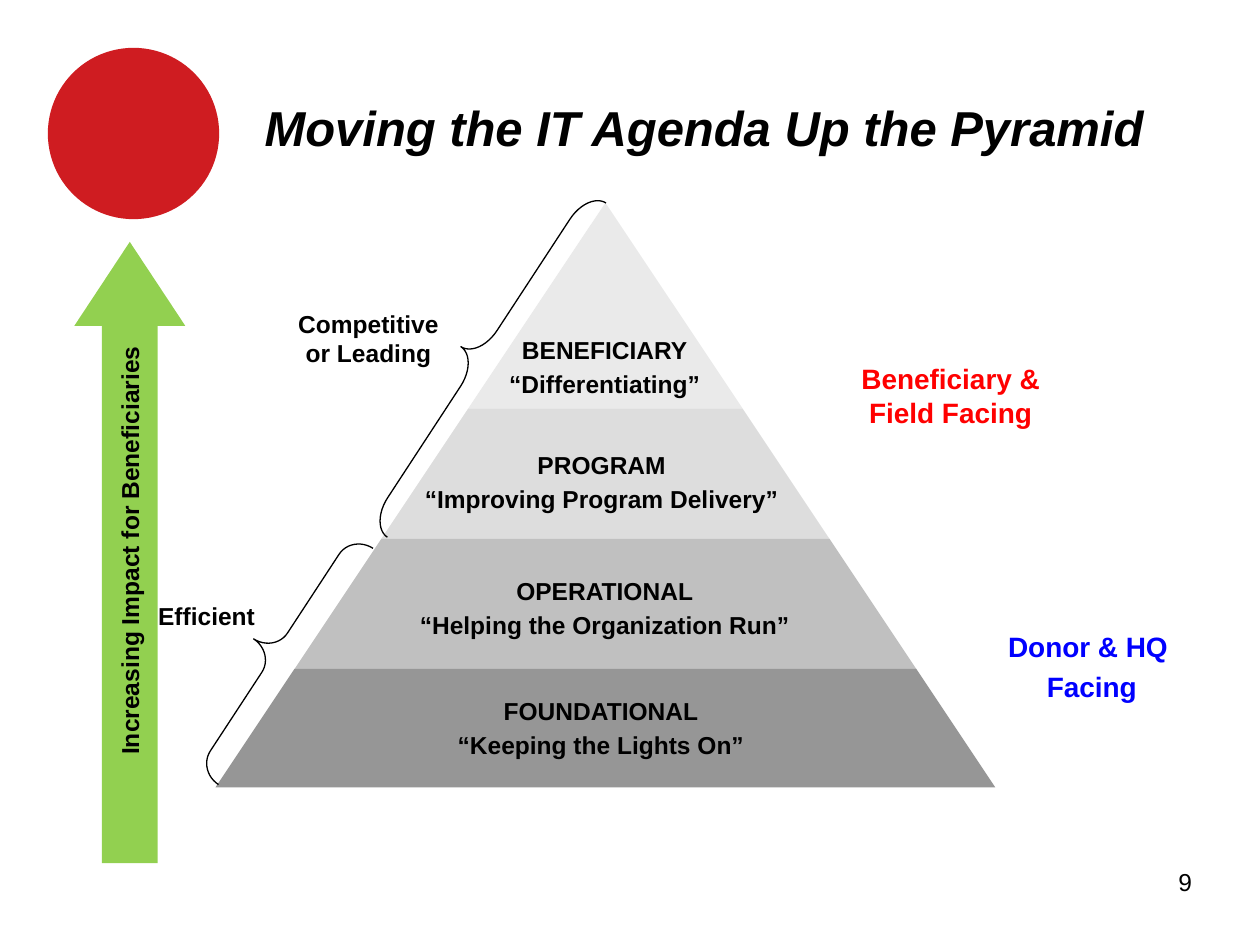
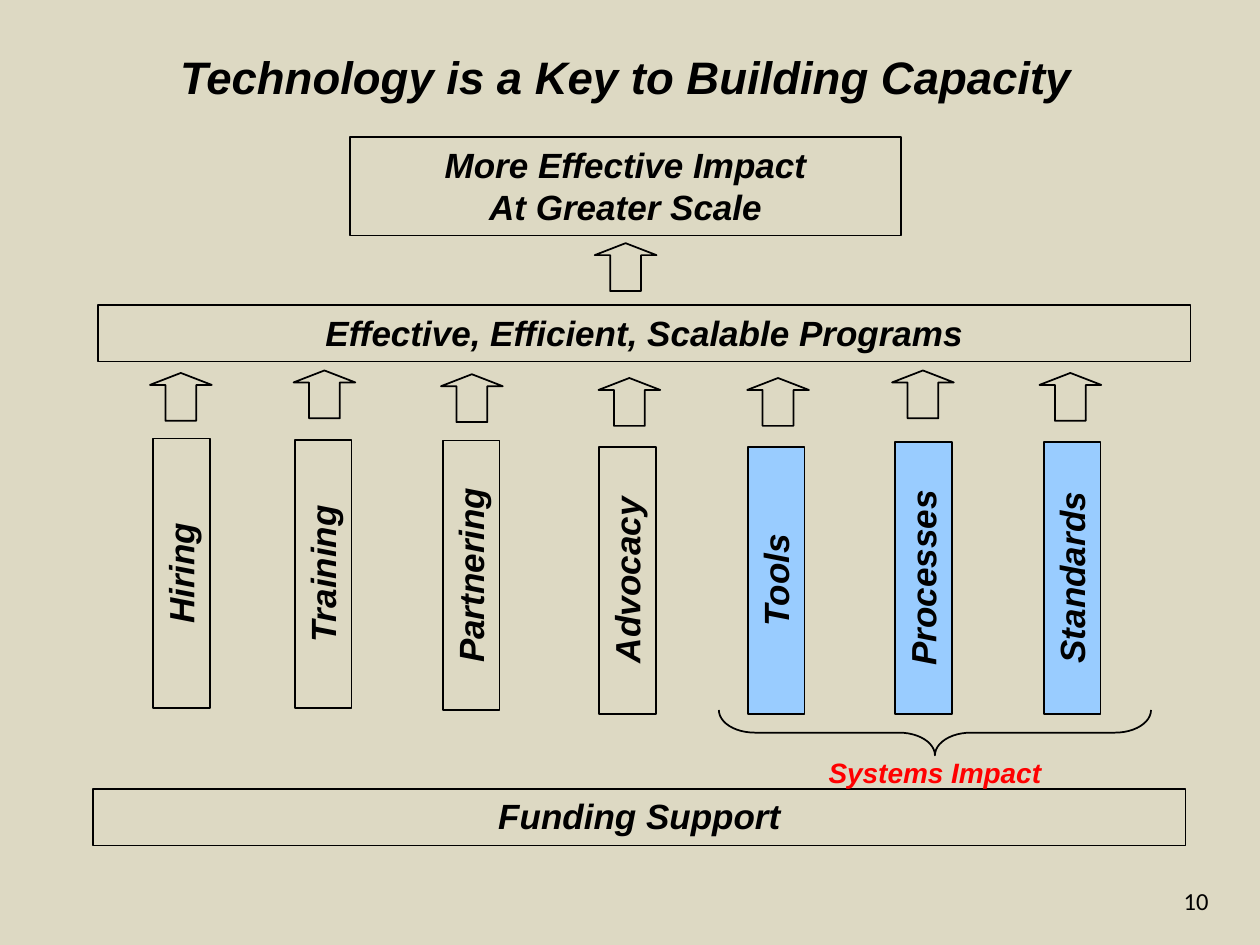
"""Build two slides on technology leadership: an IT pyramid and a capacity model."""
from dataclasses import dataclass

from pptx import Presentation
from pptx import util as u
from pptx.dml.color import RGBColor
from pptx.enum import shapes, text

COLUMNS, ROWS = 100, 75
CELL = u.Inches(0.1)
SHAPE = shapes.MSO_SHAPE
ALIGN = text.PP_ALIGN


@dataclass(frozen=True)
class Theme:
    """Colours, fonts and type sizes shared by both slides."""

    ink: str = "000000"
    paper: str = "FFFFFF"
    sand: str = "DDD9C3"
    red: str = "FF0000"
    blue: str = "0000FF"
    disc: str = "CF1C21"
    green: str = "92D050"
    sky: str = "99CCFF"
    font: str = "Arial"
    second_font: str = "Calibri"
    label_size: int = 14
    callout_size: int = 16
    box_size: int = 20
    capacity_title_size: int = 26
    pyramid_title_size: int = 28


THEME = Theme()


@dataclass(frozen=True)
class Box:
    """A rectangle in grid columns and rows."""

    left: float
    top: float
    width: float
    height: float

    def turned(self) -> "Box":
        """Swap width and height about the same centre."""
        shift = (self.width - self.height) / 2
        return Box(self.left + shift, self.top - shift, self.height, self.width)

    def lengths(self) -> list[int]:
        """Return left, top, width and height as slide lengths."""
        return [grid(value) for value in (self.left, self.top, self.width, self.height)]


@dataclass(frozen=True)
class Tier:
    """One level of the pyramid with its two-line label."""

    top: float
    bottom: float
    fill: str
    lines: tuple[str, str]
    label_centre: float
    label_top: float


@dataclass(frozen=True)
class Pillar:
    """An upright box with an arrow above it."""

    name: str
    centre: float
    top: float
    height: float
    arrow_left: float
    arrow_top: float
    fill: str | None = None


TIERS = (
    Tier(16.1, 32.4, "EAEAEA", ("BENEFICIARY", "“Differentiating”"), 48, 26.6),
    Tier(32.4, 42.75, "DDDDDD", ("PROGRAM", "“Improving Program Delivery”"), 47.75, 35.7),
    Tier(42.75, 53.1, "C0C0C0", ("OPERATIONAL", "“Helping the Organization Run”"), 48, 45.7),
    Tier(53.1, 62.5, "969696", ("FOUNDATIONAL", "“Keeping the Lights On”"), 47.7, 55.2),
)
APEX = 48.05
HALF_BASE = 30.95

PILLARS = (
    Pillar("Hiring", 14.4, 34.8, 21.4, 11.9, 29.6),
    Pillar("Training", 25.65, 34.9, 21.3, 23.3, 29.4),
    Pillar("Partnering", 37.4, 34.95, 21.4, 35, 29.7),
    Pillar("Advocacy", 49.8, 35.45, 21.2, 47.5, 30),
    Pillar("Tools", 61.6, 35.45, 21.2, 59.3, 30, THEME.sky),
    Pillar("Processes", 73.3, 35.05, 21.6, 70.8, 29.4, THEME.sky),
    Pillar("Standards", 85.1, 35.05, 21.6, 82.5, 29.6, THEME.sky),
)
PILLAR_WIDTH = 4.5


def grid(cells: float) -> int:
    """Convert grid cells to a slide length."""
    return round(cells * CELL)


def write_text(frame, *lines: str, size: float = THEME.label_size, color: str = THEME.ink,
               font: str = THEME.font, bold: bool = True, italic: bool = False,
               align=ALIGN.CENTER, spacing: float = 0) -> None:
    """Write one formatted paragraph for each line."""
    for index, line in enumerate(lines):
        paragraph = frame.add_paragraph() if index else frame.paragraphs[0]
        paragraph.alignment = align
        paragraph.space_before = u.Pt(spacing * size if index else 0)
        run = paragraph.add_run()
        run.text = line
        run.font.size, run.font.name = u.Pt(size), font
        run.font.bold, run.font.italic = bold, italic
        run.font.color.rgb = RGBColor.from_string(color)


def paint(shape, fill: str | None, line: str | None, weight: float = 1) -> None:
    """Set the fill and outline and remove the shadow."""
    shape.shadow.inherit = False
    if fill:
        shape.fill.solid()
        shape.fill.fore_color.rgb = RGBColor.from_string(fill)
    else:
        shape.fill.background()
    if line:
        shape.line.color.rgb = RGBColor.from_string(line)
        shape.line.width = u.Pt(weight)
    else:
        shape.line.fill.background()


def add_shape(slide, kind, box: Box, fill: str | None = None, line: str | None = THEME.ink,
              weight: float = 1, rotation: float = 0, adjust: tuple[float, ...] = ()):
    """Draw a preset shape."""
    shape = slide.shapes.add_shape(kind, *box.lengths())
    paint(shape, fill, line, weight)
    shape.rotation = rotation
    for index, value in enumerate(adjust):
        shape.adjustments[index] = value
    return shape


def add_label(slide, box: Box, *lines: str, rotation: float = 0, inset: bool = False,
              **style) -> None:
    """Draw a text box."""
    label = slide.shapes.add_textbox(*box.lengths())
    label.rotation = rotation
    frame = label.text_frame
    frame.word_wrap = True
    if not inset:
        frame.margin_left = frame.margin_right = frame.margin_top = frame.margin_bottom = 0
    write_text(frame, *lines, **style)


def add_text_block(slide, box: Box, *lines: str, fill: str | None = None,
                   rotation: float = 0) -> None:
    """Draw an outlined rectangle with bold italic text."""
    frame = add_shape(slide, SHAPE.RECTANGLE, box, fill, rotation=rotation).text_frame
    frame.word_wrap = True
    frame.vertical_anchor = text.MSO_ANCHOR.TOP
    write_text(frame, *lines, size=THEME.box_size, italic=True)


def add_small_arrow(slide, left: float, top: float) -> None:
    """Draw an outlined upward arrow."""
    add_shape(slide, SHAPE.UP_ARROW, Box(left, top, 4.9, 3.8), adjust=(0.5, 0.25))


def add_tier(slide, tier: Tier) -> None:
    """Draw a pyramid level whose sides follow the common slope."""
    slope = HALF_BASE / (TIERS[-1].bottom - TIERS[0].top)
    upper, lower = (slope * (y - TIERS[0].top) for y in (tier.top, tier.bottom))
    corners = [(grid(x), grid(y)) for x, y in (
        (APEX - lower, tier.bottom), (APEX + lower, tier.bottom),
        (APEX + upper, tier.top), (APEX - upper, tier.top))]
    builder = slide.shapes.build_freeform(*corners[0])
    builder.add_line_segments(corners[1:], close=True)
    paint(builder.convert_to_shape(), tier.fill, None)


def add_slide(presentation, background: str, title: str, title_box: Box, title_size: float,
              title_align, number: str, number_box: Box, number_font: str):
    """Add a title-only slide with its background, title and page number."""
    slide = presentation.slides.add_slide(presentation.slide_layouts[5])
    slide.background.fill.solid()
    slide.background.fill.fore_color.rgb = RGBColor.from_string(background)
    holder = slide.shapes.title
    holder.left, holder.top, holder.width, holder.height = title_box.lengths()
    holder.text_frame.vertical_anchor = text.MSO_ANCHOR.MIDDLE
    write_text(holder.text_frame, title, size=title_size, italic=True, align=title_align)
    add_label(slide, number_box, number, inset=True, font=number_font, bold=False,
              align=ALIGN.RIGHT)
    return slide


def build_pyramid_slide(presentation) -> None:
    """Draw the four-level IT pyramid."""
    slide = add_slide(presentation, THEME.paper, "Moving the IT Agenda Up the Pyramid",
                      Box(20, 3.8, 75, 12.5), THEME.pyramid_title_size, ALIGN.LEFT,
                      "9", Box(82.3, 68.3, 13.3, 5.2), THEME.font)
    for tier in TIERS:
        add_tier(slide, tier)
    for tier in TIERS:
        add_label(slide, Box(tier.label_centre - 15, tier.label_top, 30, 5.2), *tier.lines,
                  spacing=0.2)
    for box, curve in ((Box(36.3, 12.6, 3.4, 31.7), 0.778), (Box(19.8, 40.6, 4, 22.4), 0.466)):
        add_shape(slide, SHAPE.LEFT_BRACE, box, weight=0.75, rotation=33.2, adjust=(curve, 0.5))
    add_shape(slide, SHAPE.UP_ARROW, Box(5.9, 19.2, 8.8, 49.3), THEME.green, None,
              adjust=(0.501, 0.757))
    add_label(slide, Box(9.1, 25.7, 2.4, 34.2).turned(), "Increasing Impact for Beneficiaries",
              rotation=270, align=ALIGN.LEFT)
    add_label(slide, Box(11.9, 47.7, 9, 2.4), "Efficient")
    add_label(slide, Box(22.6, 24.5, 13.3, 4.7), "Competitive", "or Leading")
    add_label(slide, Box(78.5, 50, 15.7, 5.9), "Donor & HQ", " Facing",
              size=THEME.callout_size, color=THEME.blue, spacing=0.22)
    add_label(slide, Box(66.7, 28.7, 17.5, 5.4), "Beneficiary & Field Facing",
              size=THEME.callout_size, color=THEME.red)
    add_shape(slide, SHAPE.OVAL, Box(3.8, 3.8, 13.6, 13.6), THEME.disc, None)


def build_capacity_slide(presentation) -> None:
    """Draw the pillars that carry programs and impact."""
    slide = add_slide(presentation, THEME.sand, "Technology is a Key to Building Capacity",
                      Box(12.2, -0.2, 75, 12.5), THEME.capacity_title_size, ALIGN.CENTER,
                      "10", Box(73.6, 69.8, 23.3, 5.2), THEME.second_font)
    add_text_block(slide, Box(27.8, 10.9, 43.7, 7.8), "More Effective Impact", "At Greater Scale")
    add_small_arrow(slide, 47.2, 19.3)
    add_text_block(slide, Box(7.8, 24.2, 86.7, 4.5), "Effective, Efficient, Scalable Programs")
    for pillar in PILLARS:
        column = Box(pillar.centre - PILLAR_WIDTH / 2, pillar.top, PILLAR_WIDTH, pillar.height)
        add_small_arrow(slide, pillar.arrow_left, pillar.arrow_top)
        add_text_block(slide, column.turned(), pillar.name, fill=pillar.fill, rotation=270)
    add_text_block(slide, Box(7.4, 62.6, 86.7, 4.5), "Funding Support")
    add_shape(slide, SHAPE.RIGHT_BRACE, Box(57.05, 56.35, 34.3, 3.6).turned(), rotation=90,
              adjust=(0.792, 0.5))
    add_label(slide, Box(64.2, 59.5, 20, 3.7), "Systems Impact", inset=True,
              size=THEME.callout_size, color=THEME.red, italic=True)


def main() -> None:
    """Build and save the presentation."""
    presentation = Presentation()
    presentation.slide_width, presentation.slide_height = grid(COLUMNS), grid(ROWS)
    build_pyramid_slide(presentation)
    build_capacity_slide(presentation)
    presentation.save("out.pptx")


if __name__ == "__main__":
    main()
